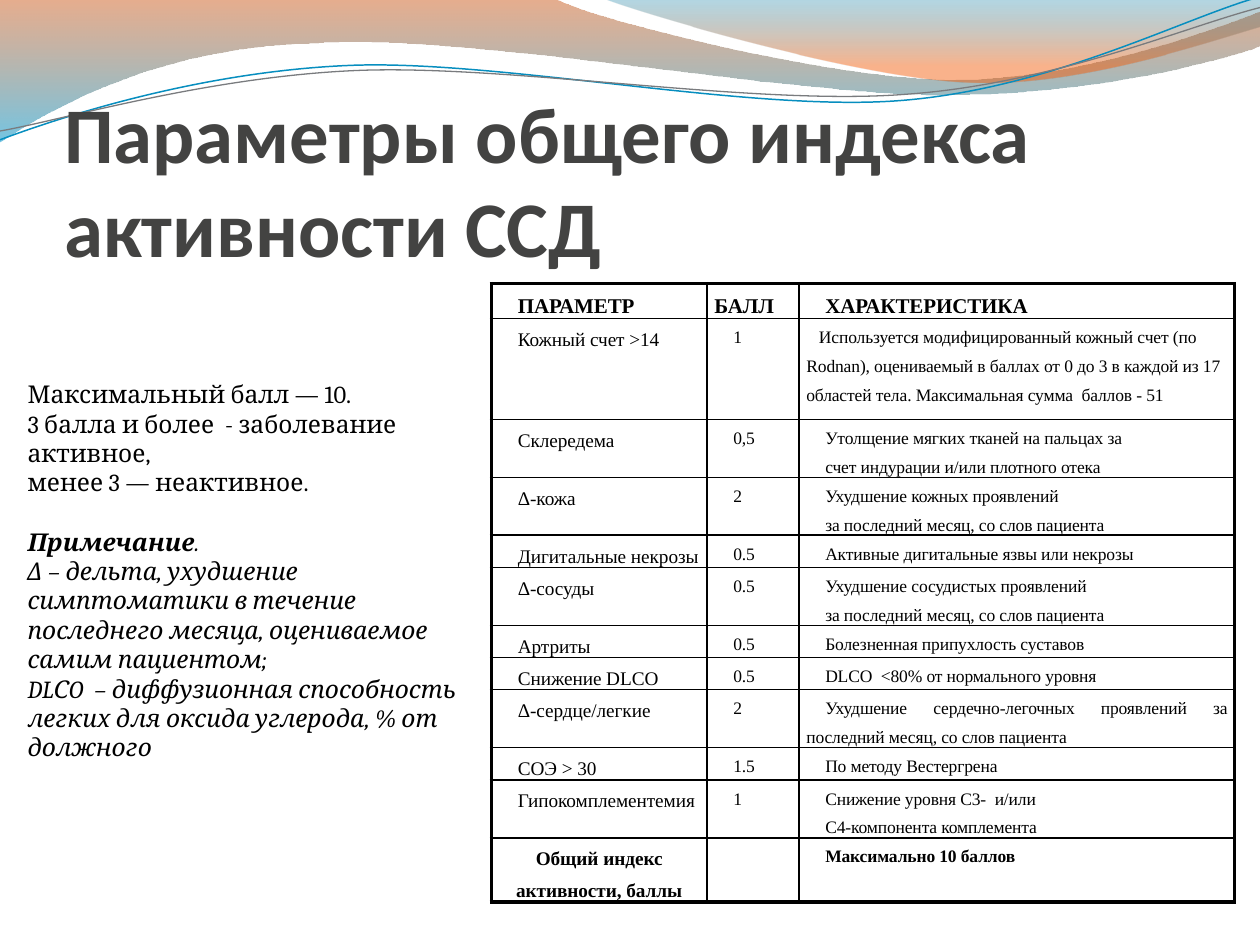
"""Build the slide on the parameters of the overall SSc activity index."""
from dataclasses import dataclass
from typing import Optional

from lxml import etree
from pptx import Presentation
from pptx.dml.color import RGBColor
from pptx.enum.text import MSO_ANCHOR, MSO_AUTO_SIZE, PP_ALIGN
from pptx.oxml.ns import qn
from pptx.util import Inches, Pt

LEFT, CENTER, JUSTIFY = PP_ALIGN.LEFT, PP_ALIGN.CENTER, PP_ALIGN.JUSTIFY
TOP, BOTTOM = MSO_ANCHOR.TOP, MSO_ANCHOR.BOTTOM
FIXED, GROW = MSO_AUTO_SIZE.NONE, MSO_AUTO_SIZE.SHAPE_TO_FIT_TEXT


@dataclass(frozen=True)
class Theme:
    title_font: str = "Calibri"
    table_font: str = "Times New Roman"
    note_font: str = "Cambria"
    title_color: str = "434342"
    ink: str = "000000"
    title_size: int = 45
    note_size: int = 14
    header_size: int = 12
    parameter_size: int = 11
    detail_size: int = 10
    thick: float = 2.25
    thin: float = 1
    first_indent: float = 0.15


@dataclass(frozen=True)
class Stop:
    position: float
    color: str
    opacity: int


@dataclass(frozen=True)
class Wave:
    start: tuple
    segments: tuple
    stops: tuple = ()
    line_color: str = ""
    line_width: float = 0


@dataclass(frozen=True)
class Row:
    height: float
    parameter: str
    score: str
    details: tuple


THEME = Theme()
WAVES = (
    Wave((0, 0), ((4.4, -0.01), (4.76, 0.17, 6.64, 0.63, 7.58, 0.63),
                  (8.53, 0.63, 9.58, 0.26, 10, 0.09), (10.01, 0.36),
                  (9.83, 0.44, 8.7, 0.76, 7.46, 0.75),
                  (6.22, 0.75, 3.82, 0.28, 2.57, 0.34),
                  (1.29, 0.36, 0.46, 0.83, -0.01, 1.13)),
         stops=(Stop(0, "C94A04", 45), Stop(1, "0095CC", 55))),
    Wave((4.79, -0.01), ((5.09, 0.11, 6.82, 0.62, 7.69, 0.65),
                         (8.56, 0.69, 9.61, 0.32, 10, 0.21), (10, 0)),
         stops=(Stop(0, "007AA6", 30), Stop(0.8, "F45700", 45))),
    Wave((0, 1.11), ((0.48, 0.93, 1.58, 0.57, 2.77, 0.52),
                     (3.95, 0.47, 5.93, 0.89, 7.13, 0.8),
                     (8.33, 0.71, 9.38, 0.15, 9.98, -0.02)),
         line_color="078EBF", line_width=0.85),
    Wave((0, 1.04), ((0.47, 0.96, 1.64, 0.61, 2.83, 0.56),
                     (4.03, 0.51, 5.97, 0.84, 7.17, 0.75),
                     (8.36, 0.67, 9.41, 0.21, 10, 0.06)),
         line_color="797B7E", line_width=0.75),
)
COLUMN_WIDTHS = (1.71, 0.73, 3.46)
LAST_MONTH = "за последний месяц, со слов пациента"
ROWS = (
    Row(0.23, "ПАРАМЕТР", "БАЛЛ", ("ХАРАКТЕРИСТИКА",)),
    Row(0.8, "Кожный счет >14", "1", (
        "Используется модифицированный кожный счет (по Rodnan), оцениваемый в баллах "
        "от 0 до 3 в каждой из 17 областей тела. Максимальная сумма  баллов - 51",)),
    Row(0.46, "Склередема", "0,5", ("Утолщение мягких тканей на пальцах за ",
                                    "счет индурации и/или плотного отека")),
    Row(0.46, "Δ-кожа", "2", ("Ухудшение кожных проявлений", LAST_MONTH)),
    Row(0.23, "Дигитальные некрозы", "0.5", ("Активные дигитальные язвы или некрозы",)),
    Row(0.46, "Δ-сосуды", "0.5", ("Ухудшение сосудистых проявлений", LAST_MONTH)),
    Row(0.23, "Артриты", "0.5", ("Болезненная припухлость суставов",)),
    Row(0.23, "Снижение DLСO", "0.5", ("DLСO  <80% от нормального уровня",)),
    Row(0.46, "Δ-сердце/легкие", "2",
        ("Ухудшение сердечно-легочных проявлений " + LAST_MONTH,)),
    Row(0.23, "СОЭ > 30", "1.5", ("По методу Вестергрена",)),
    Row(0.46, "Гипокомплементемия", "1", ("Снижение уровня С3-  и/или ",
                                          "С4-компонента комплемента")),
    Row(0.46, "Общий индекс активности, баллы", "", ("Максимально 10 баллов",)),
)


def add_run(paragraph, text: str, *, font: str, size: float, color: str = THEME.ink,
            bold: bool = False, italic: bool = False, spacing: Optional[int] = None) -> None:
    """Append a formatted run to a paragraph."""
    run = paragraph.add_run()
    run.text = text
    run.font.name, run.font.size = font, Pt(size)
    run.font.bold, run.font.italic = bold, italic
    run.font.color.rgb = RGBColor.from_string(color)
    if spacing is not None:
        run.font._element.set("spc", str(spacing))


def next_paragraph(frame, index: int):
    """Return the first paragraph of a frame, or a new one after it."""
    return frame.add_paragraph() if index else frame.paragraphs[0]


def bend_segments(shape, segments: tuple) -> None:
    """Turn the straight sides of a freeform into cubic curves where controls are given."""
    sides = list(shape._element.iter(qn("a:lnTo")))
    for side, segment in zip(sides, segments):
        if len(segment) == 2:
            continue
        curve = etree.Element(qn("a:cubicBezTo"))
        for x, y in zip(segment[::2], segment[1::2]):
            etree.SubElement(curve, qn("a:pt"), x=str(Inches(x) - shape.left),
                             y=str(Inches(y) - shape.top))
        side.getparent().replace(side, curve)


def draw_wave(slide, wave: Wave) -> None:
    """Draw a filled band or a thin curve."""
    builder = slide.shapes.build_freeform(*map(Inches, wave.start))
    builder.add_line_segments([tuple(map(Inches, segment[-2:])) for segment in wave.segments],
                              close=bool(wave.stops))
    shape = builder.convert_to_shape()
    bend_segments(shape, wave.segments)
    shape.shadow.inherit = False
    if not wave.stops:
        shape.fill.background()
        shape.line.color.rgb = RGBColor.from_string(wave.line_color)
        shape.line.width = Pt(wave.line_width)
        return
    shape.line.fill.background()
    shape.fill.gradient()
    shape.fill.gradient_angle = 270
    for target, stop in zip(shape.fill.gradient_stops, wave.stops):
        target.position = stop.position
        target.color.rgb = RGBColor.from_string(stop.color)
        color = target._gs.find(qn("a:srgbClr"))
        etree.SubElement(color, qn("a:alpha"), val=str(stop.opacity * 1000))


def set_borders(cell, widths: dict) -> None:
    """Give each side of a cell a solid line of its own width."""
    properties = cell._tc.get_or_add_tcPr()
    for side, width in widths.items():
        line = etree.SubElement(properties, qn(f"a:ln{side}"), w=str(Pt(width)))
        fill = etree.SubElement(line, qn("a:solidFill"))
        etree.SubElement(fill, qn("a:srgbClr"), val=THEME.ink)


def fill_cell(cell, lines: tuple, *, size: float, bold: bool, alignment: PP_ALIGN,
              indent: float) -> None:
    """Write the paragraphs of one table cell."""
    cell.fill.background()
    cell.margin_left = cell.margin_right = Inches(0.06)
    cell.margin_top = cell.margin_bottom = 0
    for index, line in enumerate(lines):
        paragraph = next_paragraph(cell.text_frame, index)
        paragraph.alignment, paragraph.line_spacing = alignment, 1.5
        properties = paragraph._p.get_or_add_pPr()
        properties.set("marL", "0")
        properties.set("indent", str(Inches(indent)))
        if line:
            add_run(paragraph, line, font=THEME.table_font, size=size, bold=bold, spacing=-5)


def draw_table(slide) -> None:
    """Draw the table of parameters, scores and descriptions."""
    last_row, last_column = len(ROWS) - 1, len(COLUMN_WIDTHS) - 1
    frame = slide.shapes.add_table(len(ROWS), len(COLUMN_WIDTHS), Inches(3.9), Inches(2.25),
                                   Inches(sum(COLUMN_WIDTHS)),
                                   Inches(sum(row.height for row in ROWS)))
    table = frame.table
    table.first_row = table.horz_banding = False
    for column, width in zip(table.columns, COLUMN_WIDTHS):
        column.width = Inches(width)
    for r, row in enumerate(ROWS):
        table.rows[r].height = Inches(row.height)
        for c, lines in enumerate(((row.parameter,), (row.score,), row.details)):
            edges = {"L": c == 0, "R": c == last_column, "T": r == 0, "B": r == last_row}
            set_borders(table.cell(r, c), {side: THEME.thick if outer else THEME.thin
                                           for side, outer in edges.items()})
            size = THEME.parameter_size if c == 0 else THEME.detail_size
            alignment, indent = JUSTIFY, THEME.first_indent
            if (r, c) == (1, last_column):
                alignment, indent = LEFT, 0.1
            elif (r, c) == (last_row, 0):
                alignment, indent = CENTER, 0
            elif (r, c) == (0, 1):
                indent = 0
            fill_cell(table.cell(r, c), lines, size=size if r else THEME.header_size,
                      bold=r in (0, last_row), alignment=alignment, indent=indent)


def draw_title(slide) -> None:
    """Place the title in front of the waves."""
    title = slide.shapes.title
    slide.shapes._spTree.append(title._element)
    title.left, title.top, title.width, title.height = map(Inches, (0.51, 0.99, 9, 1.18))
    frame = title.text_frame
    frame.auto_size, frame.word_wrap, frame.vertical_anchor = FIXED, True, BOTTOM
    frame.margin_left = frame.margin_right = frame.margin_bottom = 0
    frame.margin_top = Inches(0.05)
    frame.paragraphs[0].alignment = LEFT
    add_run(frame.paragraphs[0], "Параметры общего индекса активности ССД", bold=True,
            font=THEME.title_font, size=THEME.title_size, color=THEME.title_color)


def draw_notes(slide) -> None:
    """Write the interpretation of the score and the remarks."""
    box = slide.shapes.add_textbox(*map(Inches, (0.12, 2.96, 3.78, 2.93)))
    frame = box.text_frame
    frame.word_wrap, frame.auto_size, frame.vertical_anchor = True, GROW, TOP
    heading = "Примечание"
    paragraphs = (
        ("Максимальный балл — 10.",),
        ("3 балла и более  - заболевание активное,",),
        ("менее 3 — неактивное.",),
        (heading, "."),
        ("Δ – дельта, ухудшение симптоматики в течение последнего месяца, "
         "оцениваемое самим пациентом;",),
        ("DLСO  – диффузионная способность легких для оксида углерода, % от должного",),
    )
    for index, texts in enumerate(paragraphs):
        paragraph = next_paragraph(frame, index)
        if heading in texts:
            paragraph.space_before = Pt(17)
        for text in texts:
            add_run(paragraph, text, font=THEME.note_font, size=THEME.note_size,
                    bold=text == heading, italic=index >= 3)


def main() -> None:
    """Build and save the presentation."""
    presentation = Presentation()
    presentation.slide_width, presentation.slide_height = Inches(10), Inches(7.5)
    slide = presentation.slides.add_slide(presentation.slide_layouts[5])
    for wave in WAVES:
        draw_wave(slide, wave)
    draw_title(slide)
    draw_table(slide)
    draw_notes(slide)
    presentation.save("out.pptx")


if __name__ == "__main__":
    main()
